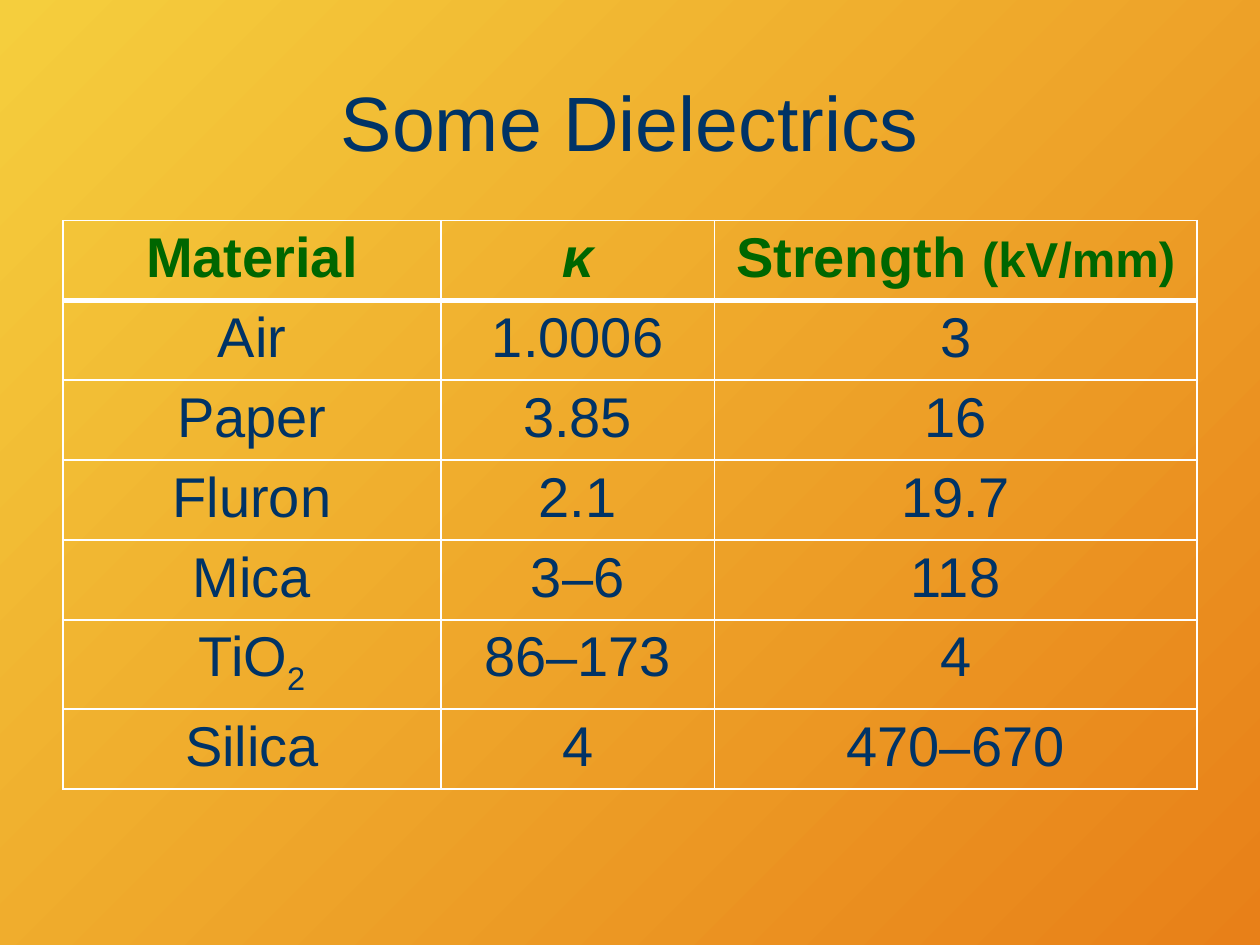
from lxml.etree import SubElement
from pptx import Presentation
from pptx.dml.color import RGBColor
from pptx.enum.text import MSO_ANCHOR, PP_ALIGN
from pptx.oxml.ns import qn
from pptx.util import Inches, Pt

NAVY = RGBColor(0x00, 0x33, 0x66)
GREEN = RGBColor(0x00, 0x66, 0x00)
WHITE = RGBColor(0xFF, 0xFF, 0xFF)
YELLOW = RGBColor(0xF5, 0xCE, 0x3D)
ORANGE = RGBColor(0xE8, 0x80, 0x18)

MARGIN = 0.5
COLUMN_WIDTHS = [3, 2.17, 3.83]
ROW_HEIGHT = 0.63
ROWS = [
    ["Material", "κ", "Strength (kV/mm)"],
    ["Air", "1.0006", "3"],
    ["Paper", "3.85", "16"],
    ["Fluron", "2.1", "19.7"],
    ["Mica", "3–6", "118"],
    ["TiO2", "86–173", "4"],
    ["Silica", "4", "470–670"],
]
# Cells whose text is split into differently formatted runs
SPLITS = {"Strength (kV/mm)": ["Strength ", "(kV/mm)"], "TiO2": ["TiO", "2"]}


def write_runs(para, pieces, size, color, bold=False):
    para.alignment = PP_ALIGN.CENTER
    for piece in pieces:
        span = para.add_run()
        span.text = piece
        span.font.name = "Arial"
        span.font.size = Pt(size)
        span.font.bold = bold
        span.font.color.rgb = color
    return para.runs


def add_border(cell, side, width):
    line = SubElement(cell._tc.get_or_add_tcPr(), qn(f"a:ln{side}"), w=str(Pt(width)))
    fill = SubElement(line, qn("a:solidFill"))
    SubElement(fill, qn("a:srgbClr"), val=str(WHITE))


deck = Presentation()
deck.slide_width, deck.slide_height = Inches(10), Inches(7.5)
page = deck.slides.add_slide(deck.slide_layouts[6])

# Background: diagonal gradient, top left to bottom right
backdrop = page.background.fill
backdrop.gradient()
backdrop.gradient_angle = 315
for stop, color in zip(backdrop.gradient_stops, [YELLOW, ORANGE]):
    stop.color.rgb = color

# Title
title = page.shapes.add_textbox(Inches(MARGIN), Inches(0.33), Inches(9), Inches(1.25))
title.text_frame.word_wrap = True
title.text_frame.vertical_anchor = MSO_ANCHOR.MIDDLE
write_runs(title.text_frame.paragraphs[0], ["Some Dielectrics"], 44, NAVY)

# Table grid
table = page.shapes.add_table(
    len(ROWS), len(COLUMN_WIDTHS), Inches(MARGIN), Inches(1.75),
    Inches(sum(COLUMN_WIDTHS)), Inches(ROW_HEIGHT * len(ROWS))).table
table.first_row = table.horz_banding = False
for column, width in zip(table.columns, COLUMN_WIDTHS):
    column.width = Inches(width)

# Table cells: green bold header above a thick rule, navy body
for row_index, values in enumerate(ROWS):
    table.rows[row_index].height = Inches(ROW_HEIGHT)
    header = row_index == 0
    for column_index, value in enumerate(values):
        cell = table.cell(row_index, column_index)
        for side in "LRTB":
            thick = (row_index, side) in [(0, "B"), (1, "T")]
            add_border(cell, side, 3 if thick else 1)
        cell.fill.background()
        spans = write_runs(cell.text_frame.paragraphs[0], SPLITS.get(value, [value]),
                           32, GREEN if header else NAVY, header)
        if value == "κ":
            spans[0].font.italic = True
        elif value == "TiO2":
            spans[1].font._element.set("baseline", "-25000")
        elif value in SPLITS:
            spans[1].font.size = Pt(28)

deck.save("out.pptx")
